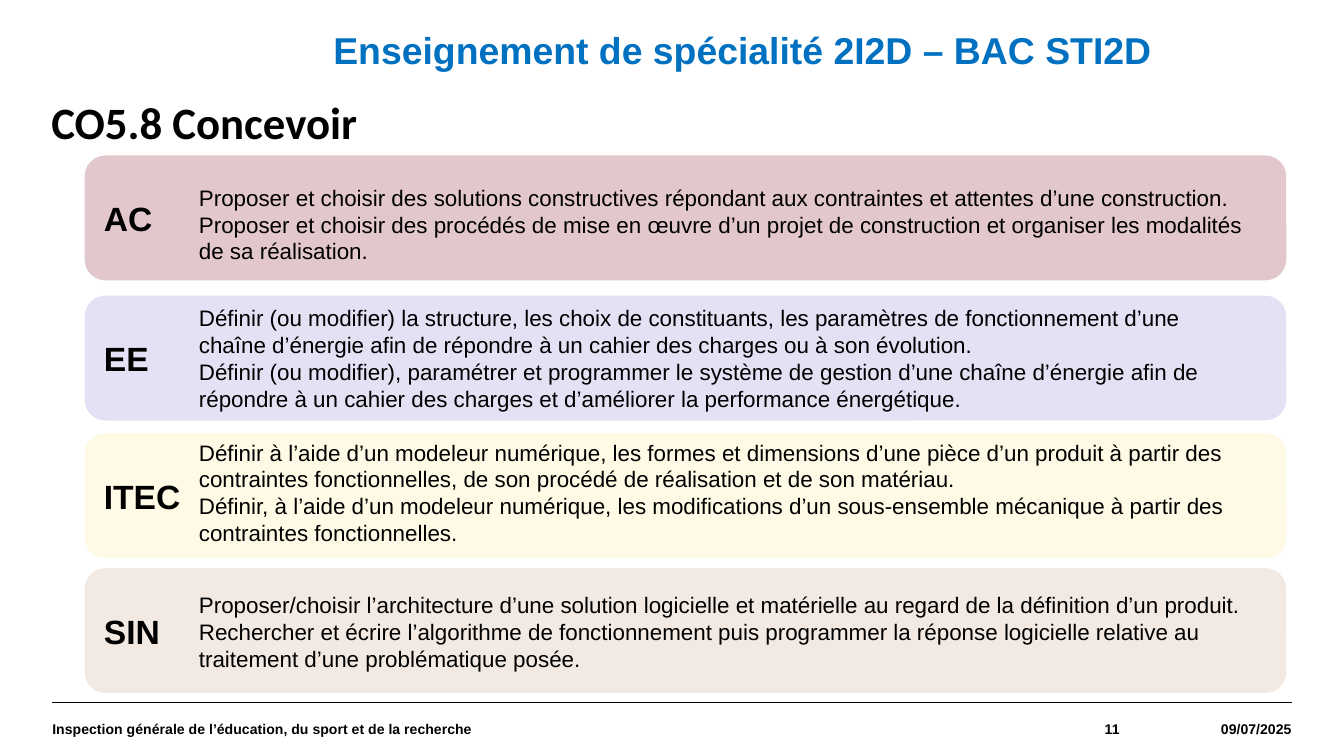
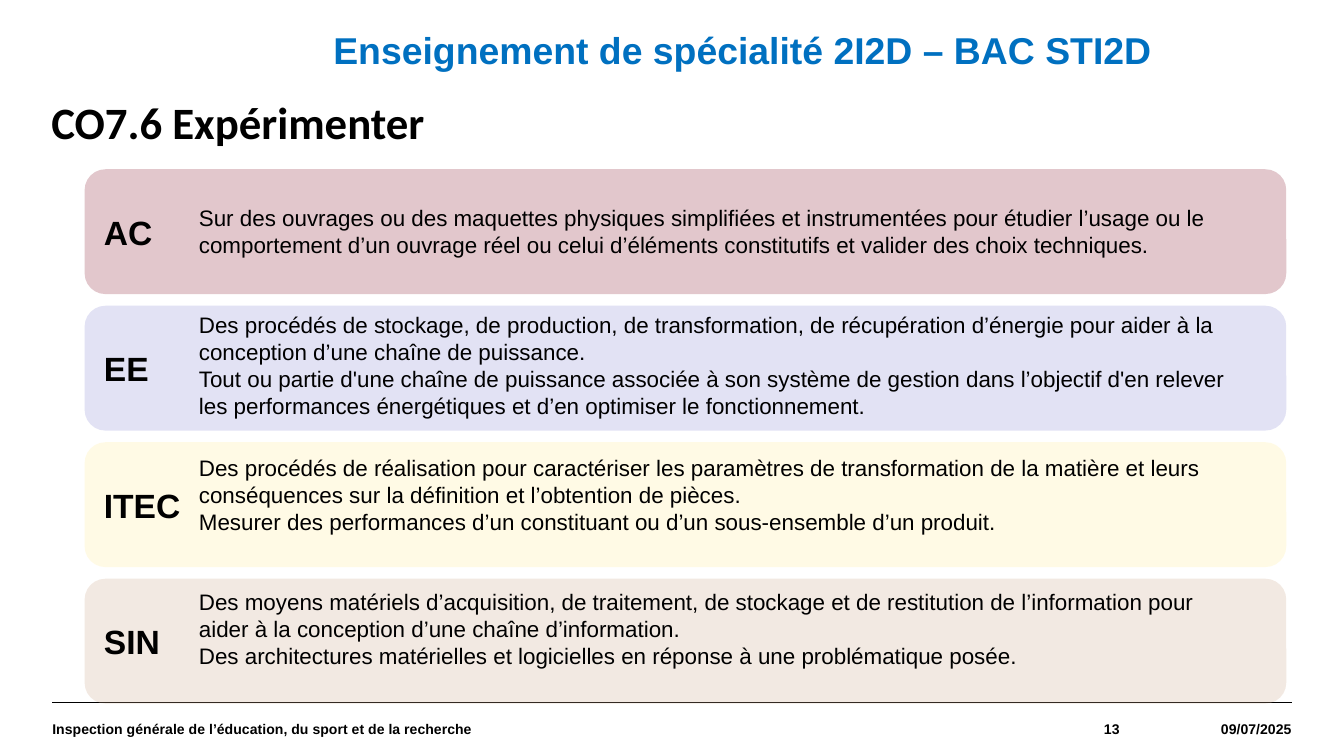
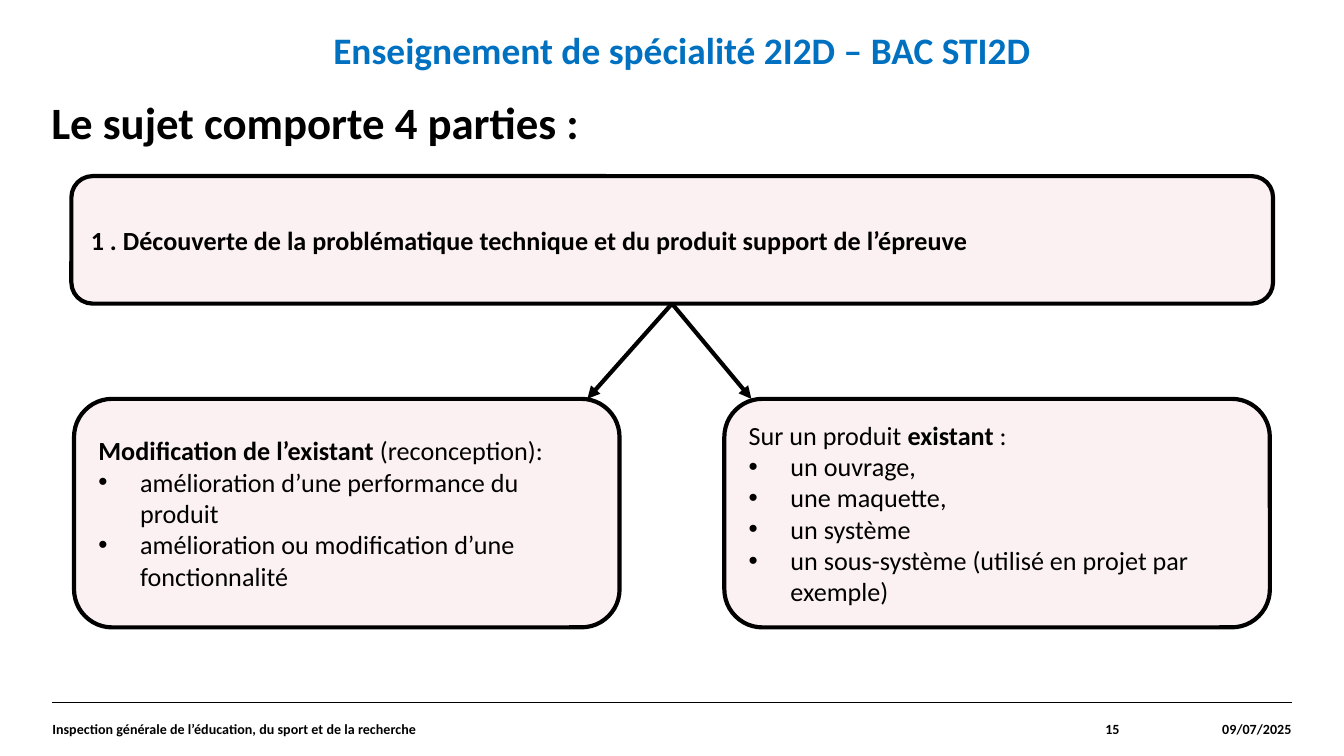
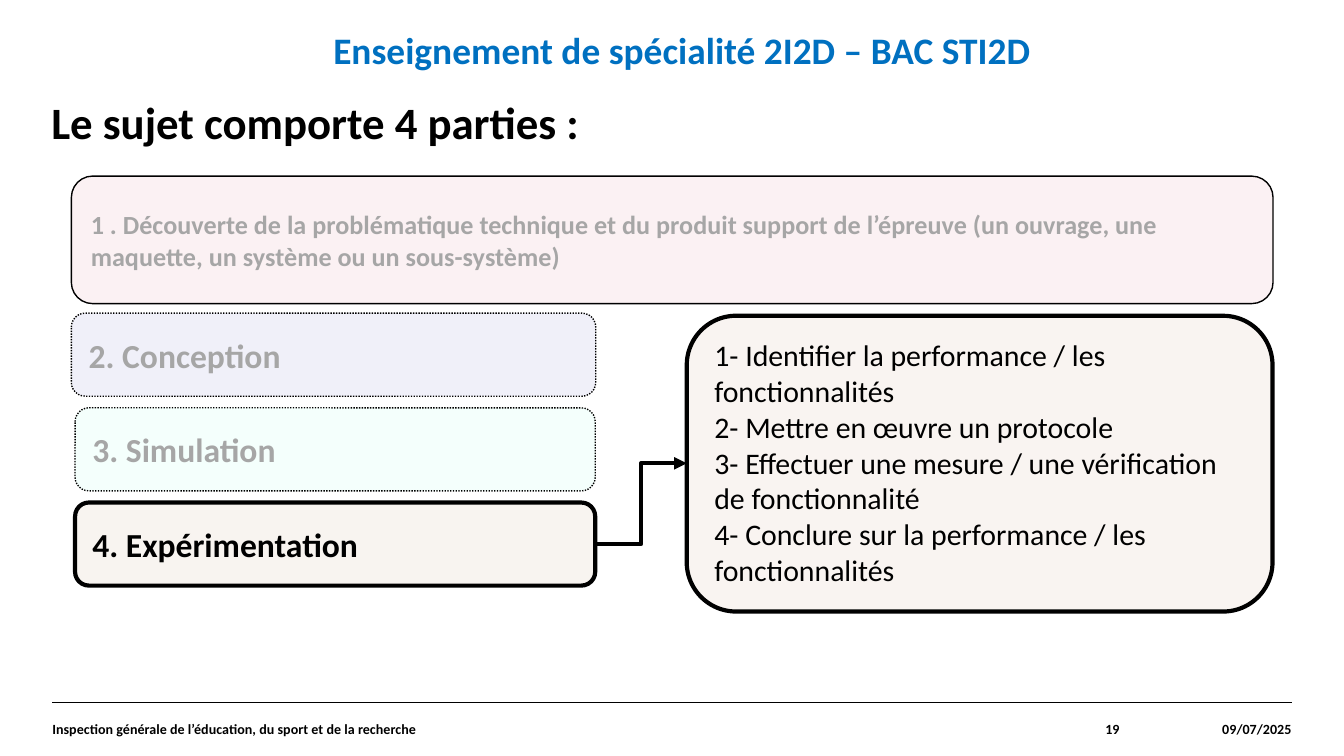
"""Build four slides on the 2I2D speciality of the STI2D baccalaureate."""
from dataclasses import dataclass

from lxml.etree import SubElement
from pptx import Presentation
from pptx.dml.color import RGBColor
from pptx.enum.dml import MSO_LINE
from pptx.enum.shapes import MSO_CONNECTOR, MSO_SHAPE
from pptx.enum.text import MSO_ANCHOR, MSO_AUTO_SIZE, PP_ALIGN
from pptx.oxml.ns import qn
from pptx.shapes.base import BaseShape
from pptx.slide import Slide
from pptx.text.text import TextFrame
from pptx.util import Cm, Pt


@dataclass(frozen=True)
class Theme:
    black: str = "000000"
    blue: str = "0070C0"
    muted: str = "A6A6A6"
    burgundy: str = "8C2237"
    violet: str = "8E8ED5"
    yellow: str = "FFEE99"
    tan: str = "CFA98D"
    pink: str = "F2C9D1"
    lavender: str = "C6C6EA"
    mint: str = "D5FFF4"
    sand: str = "E7D4C6"
    cream: str = "F9F4F1"
    tint: int = 25
    arial: str = "Arial"
    calibri: str = "Calibri"
    title_size: float = 24
    heading_size: float = 20
    label_size: float = 18
    list_size: float = 16
    box_size: float = 14
    body_size: float = 12
    footer_size: float = 7.5
    thin: float = 0.75
    thick: float = 2.25


THEME = Theme()


@dataclass(frozen=True)
class Area:
    left: float
    top: float
    width: float
    height: float


@dataclass(frozen=True)
class Style:
    size: float
    font: str = THEME.calibri
    color: str = THEME.black
    bold: bool = False


@dataclass(frozen=True)
class Span:
    text: str
    bold: bool = False


@dataclass(frozen=True)
class Line:
    spans: tuple[Span, ...]
    bulleted: bool = False
    space_before: float = 0


@dataclass(frozen=True)
class Box:
    area: Area
    fill: str
    lines: tuple[Line, ...]
    style: Style
    border: float = 0
    opacity: int = THEME.tint
    dotted: bool = False
    anchor: MSO_ANCHOR = MSO_ANCHOR.MIDDLE


@dataclass(frozen=True)
class Arrow:
    start: tuple[float, float]
    end: tuple[float, float]
    kind: MSO_CONNECTOR = MSO_CONNECTOR.STRAIGHT


@dataclass(frozen=True)
class FooterPart:
    text: str
    left: float
    width: float
    alignment: PP_ALIGN


@dataclass(frozen=True)
class SkillPage:
    title: str
    number: str
    tops: tuple[float, ...]
    text_area: Area
    lines: tuple[Line, ...]


@dataclass(frozen=True)
class SubjectPage:
    number: str
    boxes: tuple[Box, ...]
    arrows: tuple[Arrow, ...]


RULE_LEFT, RULE_RIGHT, FOOTER_TOP, FOOTER_HEIGHT = 0.99, 24.41, 13.28, 0.99
TITLE_AREA = Area(0.97, 1.91, 23.39, 0.99)
HEADING_AREA = Area(6.3, 0.51, 15.8, 0.99)
HEADING = "Enseignement de spécialité 2I2D – BAC STI2D"
SUBJECT_TITLE = "Le sujet comporte 4 parties :"
DISCOVERY_AREA = Area(1.35, 3.33, 22.71, 2.41)
DISCOVERY = "1 . Découverte de la problématique technique et du produit support de l’épreuve"
BAND_LEFT, BAND_WIDTH, BAND_HEIGHT = 1.6, 22.71, 2.36
BANDS = (
    ("AC", THEME.burgundy),
    ("EE", THEME.violet),
    ("ITEC", THEME.yellow),
    ("SIN", THEME.tan),
)


def plain(text: str, space_before: float = 0) -> Line:
    """Return a line of regular text."""
    return Line((Span(text),), space_before=space_before)


def strong(text: str) -> Line:
    """Return a line of bold text."""
    return Line((Span(text, True),))


def bullet(text: str) -> Line:
    """Return a bulleted line."""
    return Line((Span(text),), bulleted=True)


SKILL_PAGES = (
    SkillPage(
        "CO5.8 Concevoir", "11", (2.94, 5.59, 8.19, 10.74), Area(3.51, 3.35, 20.32, 9.58),
        (
            plain("Proposer et choisir des solutions constructives répondant aux contraintes et attentes d’une construction."),
            plain("Proposer et choisir des procédés de mise en œuvre d’un projet de construction et organiser les modalités de sa réalisation."),
            plain("Définir (ou modifier) la structure, les choix de constituants, les paramètres de fonctionnement d’une chaîne d’énergie afin de répondre à un cahier des charges ou à son évolution.", 21.4),
            plain("Définir (ou modifier), paramétrer et programmer le système de gestion d’une chaîne d’énergie afin de répondre à un cahier des charges et d’améliorer la performance énergétique."),
            plain("Définir à l’aide d’un modeleur numérique, les formes et dimensions d’une pièce d’un produit à partir des contraintes fonctionnelles, de son procédé de réalisation et de son matériau.", 14.4),
            plain("Définir, à l’aide d’un modeleur numérique, les modifications d’un sous-ensemble mécanique à partir des contraintes fonctionnelles."),
            plain("Proposer/choisir l’architecture d’une solution logicielle et matérielle au regard de la définition d’un produit.", 24),
            plain("Rechercher et écrire l’algorithme de fonctionnement puis programmer la réponse logicielle relative au traitement d’une problématique posée."),
        ),
    ),
    SkillPage(
        "CO7.6 Expérimenter", "13", tuple(3.2 + 2.58 * row for row in range(4)), Area(3.51, 3.73, 20.32, 9.14),
        (
            plain("Sur des ouvrages ou des maquettes physiques simplifiées et instrumentées pour étudier l’usage ou le comportement d’un ouvrage réel ou celui d’éléments constitutifs et valider des choix techniques."),
            plain("Des procédés de stockage, de production, de transformation, de récupération d’énergie pour aider à la conception d’une chaîne de puissance.", 28.8),
            plain("Tout ou partie d'une chaîne de puissance associée à son système de gestion dans l’objectif d'en relever les performances énergétiques et d’en optimiser le fonctionnement."),
            plain("Des procédés de réalisation pour caractériser les paramètres de transformation de la matière et leurs conséquences sur la définition et l’obtention de pièces.", 18.8),
            plain("Mesurer des performances d’un constituant ou d’un sous-ensemble d’un produit."),
            plain("Des moyens matériels d’acquisition, de traitement, de stockage et de restitution de l’information pour aider à la conception d’une chaîne d’information.", 28.8),
            plain("Des architectures matérielles et logicielles en réponse à une problématique posée."),
        ),
    ),
)

BOX_STYLE = Style(THEME.box_size)
MUTED_LABEL = Style(THEME.label_size, color=THEME.muted)

SUBJECT_PAGES = (
    SubjectPage(
        "15",
        (
            Box(DISCOVERY_AREA, THEME.pink, (strong(DISCOVERY),), BOX_STYLE, THEME.thick),
            Box(
                Area(1.4, 7.54, 10.31, 4.32), THEME.pink,
                (
                    Line((Span("Modification de l’existant ", True), Span("(reconception):"))),
                    bullet("amélioration d’une performance du produit"),
                    bullet("amélioration ou modification d’une fonctionnalité"),
                ),
                BOX_STYLE, THEME.thick,
            ),
            Box(
                Area(13.69, 7.54, 10.31, 4.32), THEME.pink,
                (
                    Line((Span("Sur un produit "), Span("existant ", True), Span(":"))),
                    bullet("un ouvrage,"),
                    bullet("une maquette,"),
                    bullet("un système"),
                    bullet("un sous-système (utilisé en projet par exemple)"),
                ),
                BOX_STYLE, THEME.thick,
            ),
        ),
        (Arrow((12.7, 5.74), (11.1, 7.54)), Arrow((12.7, 5.74), (14.2, 7.54))),
    ),
    SubjectPage(
        "19",
        (
            Box(
                DISCOVERY_AREA, THEME.pink,
                (strong(DISCOVERY + " (un ouvrage, une maquette, un système ou un sous-système)"),),
                Style(THEME.box_size, color=THEME.muted), THEME.thin,
            ),
            Box(Area(1.35, 5.92, 9.91, 1.57), THEME.lavender, (strong("2. Conception"),),
                MUTED_LABEL, THEME.thin, dotted=True),
            Box(Area(1.42, 7.71, 9.83, 1.57), THEME.mint, (strong("3. Simulation"),),
                MUTED_LABEL, THEME.thin, dotted=True),
            Box(Area(1.42, 9.5, 9.83, 1.57), THEME.sand, (strong("4. Expérimentation"),),
                Style(THEME.label_size), THEME.thick),
            Box(
                Area(12.98, 5.97, 11.07, 5.59), THEME.cream,
                (
                    plain("1- Identifier la performance / les fonctionnalités"),
                    plain("2- Mettre en œuvre un protocole"),
                    plain("3- Effectuer une mesure / une vérification de fonctionnalité"),
                    plain("4- Conclure sur la performance / les fonctionnalités"),
                ),
                Style(THEME.list_size), THEME.thick, opacity=100, anchor=MSO_ANCHOR.TOP,
            ),
        ),
        (Arrow((11.25, 10.29), (12.98, 8.76), MSO_CONNECTOR.ELBOW),),
    ),
)


def place(shape: BaseShape, area: Area) -> None:
    """Move and size a shape."""
    shape.left, shape.top = Cm(area.left), Cm(area.top)
    shape.width, shape.height = Cm(area.width), Cm(area.height)


def write_lines(
    frame: TextFrame,
    lines: tuple[Line, ...],
    style: Style,
    alignment: PP_ALIGN = PP_ALIGN.LEFT,
    anchor: MSO_ANCHOR = MSO_ANCHOR.TOP,
) -> None:
    """Write styled lines into a text frame."""
    frame.word_wrap = True
    frame.vertical_anchor = anchor
    for index, line in enumerate(lines):
        paragraph = frame.add_paragraph() if index else frame.paragraphs[0]
        if line.bulleted:
            properties = paragraph._p.get_or_add_pPr()
            properties.set("marL", str(Cm(0.79)))
            properties.set("indent", str(-Cm(0.79)))
            SubElement(properties, qn("a:buFont"), typeface=THEME.arial)
            SubElement(properties, qn("a:buChar"), char="•")
        paragraph.alignment = alignment
        if line.space_before:
            paragraph.space_before = Pt(line.space_before)
        for span in line.spans:
            run = paragraph.add_run()
            run.text = span.text
            run.font.name = style.font
            run.font.size = Pt(style.size)
            run.font.bold = style.bold or span.bold
            run.font.color.rgb = RGBColor.from_string(style.color)


def remove_margins(frame: TextFrame) -> None:
    """Set all four insets of a text frame to zero."""
    frame.margin_left = frame.margin_top = frame.margin_right = frame.margin_bottom = Cm(0)


def add_text(slide: Slide, area: Area) -> TextFrame:
    """Add a text box and return its frame."""
    shape = slide.shapes.add_textbox(Cm(area.left), Cm(area.top), Cm(area.width), Cm(area.height))
    return shape.text_frame


def add_box(slide: Slide, box: Box) -> None:
    """Draw a rounded box with its text."""
    area = box.area
    shape = slide.shapes.add_shape(
        MSO_SHAPE.ROUNDED_RECTANGLE, Cm(area.left), Cm(area.top), Cm(area.width), Cm(area.height)
    )
    shape.shadow.inherit = False
    shape.fill.solid()
    shape.fill.fore_color.rgb = RGBColor.from_string(box.fill)
    if box.opacity < 100:
        color = shape._element.spPr.find(qn("a:solidFill")).find(qn("a:srgbClr"))
        SubElement(color, qn("a:alpha"), val=str(box.opacity * 1000))
    if box.border:
        shape.line.color.rgb = RGBColor.from_string(THEME.black)
        shape.line.width = Pt(box.border)
        if box.dotted:
            shape.line.dash_style = MSO_LINE.ROUND_DOT
    else:
        shape.line.fill.background()
    write_lines(shape.text_frame, box.lines, box.style, anchor=box.anchor)


def add_line(slide: Slide, arrow: Arrow, width: float, pointed: bool) -> None:
    """Draw a connector, with an arrowhead if it is pointed."""
    connector = slide.shapes.add_connector(
        arrow.kind, *(Cm(value) for value in (*arrow.start, *arrow.end))
    )
    connector.line.color.rgb = RGBColor.from_string(THEME.black)
    connector.line.width = Pt(width)
    if pointed:
        SubElement(connector.line._get_or_add_ln(), qn("a:tailEnd"), type="triangle")
    SubElement(connector._element.spPr, qn("a:effectLst"))


def add_page(presentation: Presentation, title: str, number: str, font: str) -> Slide:
    """Add a slide with its title, heading and footer."""
    slide = presentation.slides.add_slide(presentation.slide_layouts[5])
    rule = Arrow((RULE_LEFT, FOOTER_TOP), (RULE_RIGHT, FOOTER_TOP))
    add_line(slide, rule, THEME.thin, pointed=False)
    title_shape = slide.shapes.title
    place(title_shape, TITLE_AREA)
    frame = title_shape.text_frame
    remove_margins(frame)
    frame.auto_size = MSO_AUTO_SIZE.NONE
    write_lines(frame, (strong(title),), Style(THEME.title_size))
    frame.paragraphs[0].line_spacing = 0.9

    heading = add_text(slide, HEADING_AREA)
    remove_margins(heading)
    write_lines(heading, (strong(HEADING),), Style(THEME.heading_size, font, THEME.blue))

    footer_parts = (
        FooterPart("09/07/2025", 21.16, 3.25, PP_ALIGN.RIGHT),
        FooterPart("Inspection générale de l’éducation, du sport et de la recherche",
                   RULE_LEFT, 16.41, PP_ALIGN.LEFT),
        FooterPart(number, 17.4, 3.76, PP_ALIGN.RIGHT),
    )
    for part in footer_parts:
        footer = add_text(slide, Area(part.left, FOOTER_TOP, part.width, FOOTER_HEIGHT))
        remove_margins(footer)
        write_lines(footer, (strong(part.text),), Style(THEME.footer_size, font),
                    part.alignment, MSO_ANCHOR.MIDDLE)
    return slide


def add_skill_page(presentation: Presentation, page: SkillPage) -> None:
    """Add a slide with one band for each speciality."""
    slide = add_page(presentation, page.title, page.number, THEME.arial)
    for (label, color), top in zip(BANDS, page.tops):
        area = Area(BAND_LEFT, top, BAND_WIDTH, BAND_HEIGHT)
        add_box(slide, Box(area, color, (strong(label),), Style(THEME.label_size, THEME.arial)))
    write_lines(add_text(slide, page.text_area), page.lines, Style(THEME.body_size, THEME.arial))


def add_subject_page(presentation: Presentation, page: SubjectPage) -> None:
    """Add a slide with the parts of the subject."""
    slide = add_page(presentation, SUBJECT_TITLE, page.number, THEME.calibri)
    for box in page.boxes:
        add_box(slide, box)
    for arrow in page.arrows:
        add_line(slide, arrow, THEME.thick, pointed=True)


def main() -> None:
    """Build and save the presentation."""
    presentation = Presentation()
    presentation.slide_width, presentation.slide_height = Cm(25.4), Cm(14.29)
    for skill_page in SKILL_PAGES:
        add_skill_page(presentation, skill_page)
    for subject_page in SUBJECT_PAGES:
        add_subject_page(presentation, subject_page)
    presentation.save("out.pptx")


if __name__ == "__main__":
    main()
